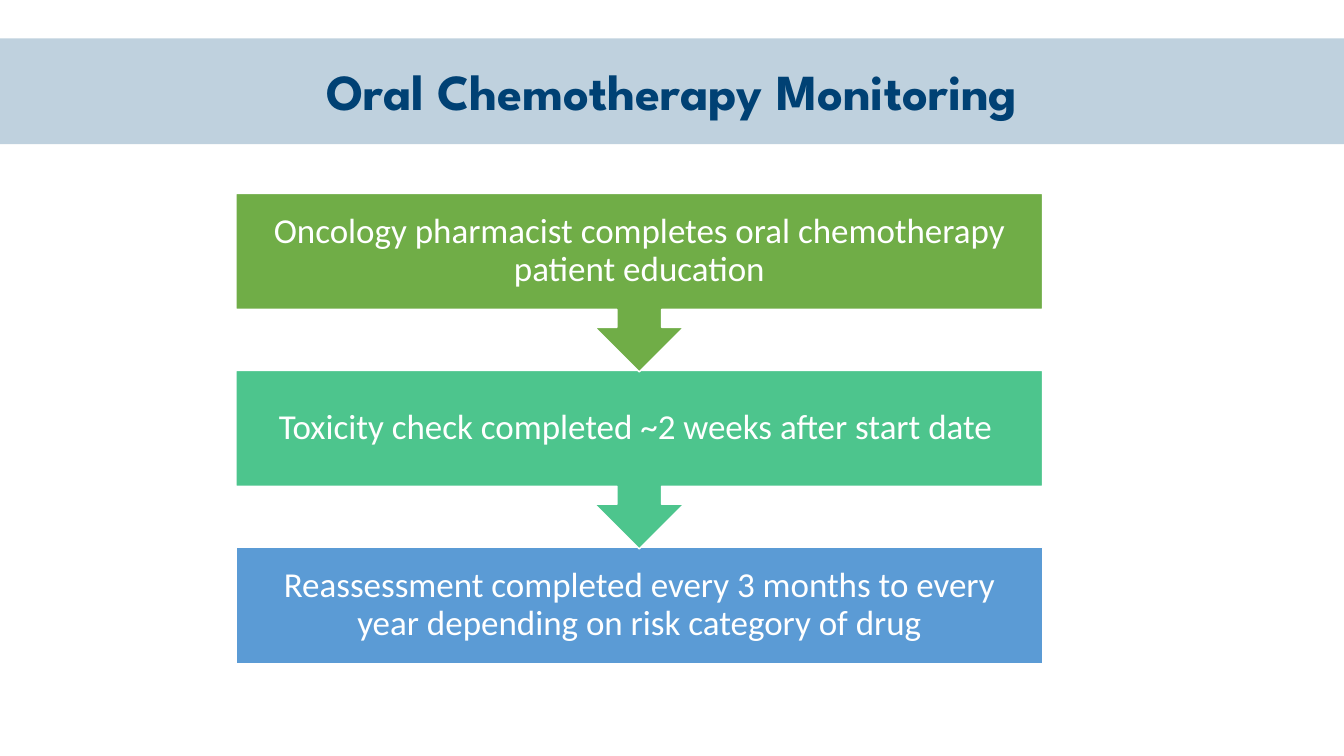
from lxml.etree import SubElement
from pptx import Presentation
from pptx.dml.color import RGBColor
from pptx.enum.shapes import MSO_SHAPE
from pptx.enum.text import MSO_ANCHOR, MSO_AUTO_SIZE, PP_ALIGN
from pptx.oxml.ns import qn
from pptx.util import Inches, Pt

WHITE = RGBColor(0xFF, 0xFF, 0xFF)
BAND = RGBColor(0x00, 0x49, 0x7F)
NAVY = RGBColor(0x00, 0x41, 0x74)
GREEN = RGBColor(0x70, 0xAD, 0x47)
TEAL = RGBColor(0x4D, 0xC5, 0x8D)
BLUE = RGBColor(0x5B, 0x9B, 0xD5)

STEPS = [
    ("Oncology pharmacist completes oral chemotherapy patient education", GREEN),
    ("Toxicity check completed ~2 weeks after start date ", TEAL),
    ("Reassessment completed every 3 months to every year depending on risk category of drug", BLUE),
]


def add_block(slide, kind, box, color):
    """Add a flat filled shape in the box and return it."""
    block = slide.shapes.add_shape(kind, *map(Inches, box))
    block.shadow.inherit = False
    block.fill.solid()
    block.fill.fore_color.rgb = color
    return block


def write(frame, text, font, size, color, bold=False):
    """Write one centred run into the frame and return its paragraph."""
    frame.word_wrap = True
    para = frame.paragraphs[0]
    para.alignment = PP_ALIGN.CENTER
    run = para.add_run()
    run.text = text
    run.font.name = font
    run.font.size = Pt(size)
    run.font.bold = bold
    run.font.color.rgb = color
    return para


def add_header(slide, box, text):
    """Draw the pale band across the box with the title centred on it."""
    left, top, width, height = box
    band = add_block(slide, MSO_SHAPE.RECTANGLE, box, BAND)
    band.line.fill.background()
    tint = band.fill._xPr.find(qn("a:solidFill"))[0]
    SubElement(tint, qn("a:alpha"), val="25000")
    inset = 2.25
    title = slide.shapes.add_textbox(
        Inches(left + inset), Inches(top + 0.17),
        Inches(width - 2 * inset), Inches(height - 0.34))
    title.text_frame.auto_size = MSO_AUTO_SIZE.SHAPE_TO_FIT_TEXT
    write(title.text_frame, text, "League Spartan", 36, NAVY, True)


def add_flow(slide, box, steps):
    """Stack the steps down the box, each but the last pointing to the next."""
    left, top, width, height = box
    body, callout = 1.15, 1.77
    last = len(steps) - 1
    pitch = (height - body) / last
    for index, (text, color) in reversed(list(enumerate(steps))):
        kind = MSO_SHAPE.RECTANGLE if index == last else MSO_SHAPE.DOWN_ARROW_CALLOUT
        tall = body if index == last else callout
        step = add_block(slide, kind, (left, top + index * pitch, width, tall), color)
        step.line.color.rgb = WHITE
        step.line.width = Pt(1)
        frame = step.text_frame
        frame.vertical_anchor = MSO_ANCHOR.MIDDLE
        frame.margin_left = frame.margin_right = Inches(0.19)
        frame.margin_top = frame.margin_bottom = Inches(0.19)
        para = write(frame, text, "Calibri", 25, WHITE)
        para.line_spacing = 0.9


def main():
    """Build the slide and save it."""
    deck = Presentation()
    deck.slide_width, deck.slide_height = Inches(13.33), Inches(7.5)
    slide = deck.slides.add_slide(deck.slide_layouts[6])
    add_header(slide, (0, 0.38, 13.33, 1.05), "Oral Chemotherapy Monitoring")
    add_flow(slide, (2.34, 1.92, 8, 4.66), STEPS)
    deck.save("out.pptx")


if __name__ == "__main__":
    main()
